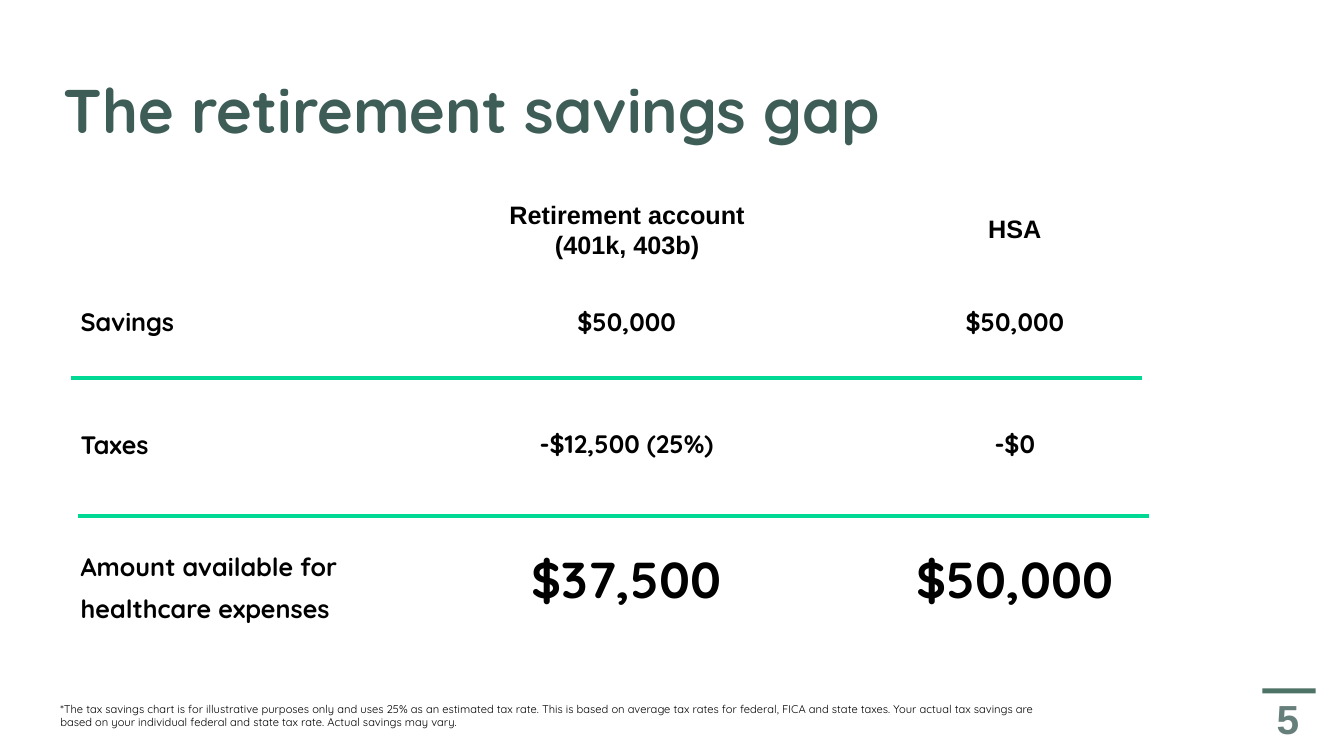
import pptx
import pptx.util
import pptx.dml.color
import pptx.enum.shapes
import pptx.enum.text
import pptx.oxml.ns
from lxml import etree
from dataclasses import dataclass

Inches = pptx.util.Inches
Pt = pptx.util.Pt
ALIGN = pptx.enum.text.PP_ALIGN
ANCHOR = pptx.enum.text.MSO_ANCHOR

TITLE = "The retirement savings gap"
LABELS = [["Savings"], ["Taxes"], ["Amount available for", "healthcare expenses"]]
ACCOUNTS = [
    {"header": ["Retirement account", "(401k, 403b)"], "header_box": (4.93, 1.93, 2.58, 0.71),
     "amounts": ["$50,000", "-$12,500 (25%)", "$37,500"], "left": 5.06, "width": 2.31},
    {"header": ["HSA"], "header_box": (9.7, 2.07, 0.73, 0.4),
     "amounts": ["$50,000", "-$0", "$50,000"], "left": 8.5, "width": 3.13},
]
FOOTNOTE = [
    "*The tax savings chart is for illustrative purposes only and uses 25% as an estimated tax rate. "
    "This is based on average tax rates for federal, FICA and state taxes. Your actual tax savings are",
    "based on your individual federal and state tax rate. Actual savings may vary.",
]
PAGE = "5"
RULES = [(0.7, 3.75), (0.77, 5.12)]
RULE_WIDTH = 10.63
ROWS_TOP, ROWS_HEIGHT = 3.02, 4.27


@dataclass(frozen=True)
class Theme:
    heading: str = "3E5D57"
    text: str = "000000"
    rule: str = "00D993"
    bar: str = "1C4C3C"
    soft: int = 78
    display: str = "Quicksand"
    plain: str = "Arial"
    title: int = 44
    page: int = 29
    body: int = 18
    total: int = 36
    note: int = 8
    leading: float = 0.9
    line_gap: float = 10
    row_gap: float = 68.3


theme = Theme()


def paint(fill, color, opacity=100):
    fill.solid()
    fill.fore_color.rgb = pptx.dml.color.RGBColor.from_string(color)
    if opacity < 100:
        node = next(fill._xPr.iter(pptx.oxml.ns.qn("a:srgbClr")))
        etree.SubElement(node, pptx.oxml.ns.qn("a:alpha"), val=str(opacity * 1000))


def add_run(p, text, size, font=theme.display, color=theme.text, bold=True, opacity=100):
    r = p.add_run()
    r.text = text
    r.font.size, r.font.name, r.font.bold = Pt(size), font, bold
    paint(r.font.fill, color, opacity)


def next_paragraph(tf, index, align, leading=None, gap=0):
    p = tf.add_paragraph() if index else tf.paragraphs[0]
    p.alignment = align
    p.space_before = Pt(gap)
    if leading:
        p.line_spacing = leading
    return p


def place(sp, left, top, width, height):
    sp.left, sp.top = Inches(left), Inches(top)
    sp.width, sp.height = Inches(width), Inches(height)


def add_box(s, box, anchor=ANCHOR.TOP, wrap=True):
    tf = s.shapes.add_textbox(*map(Inches, box)).text_frame
    tf.word_wrap, tf.vertical_anchor = wrap, anchor
    return tf


def write_rows(tf, rows, align, last_size):
    index = 0
    for number, lines in enumerate(rows):
        for position, line in enumerate(lines):
            gap = theme.row_gap if number and not position else theme.line_gap
            p = next_paragraph(tf, index, align, theme.leading, gap)
            add_run(p, line, last_size if number == len(rows) - 1 else theme.body)
            index += 1


def add_title(s):
    sp = s.shapes.title
    place(sp, 0.53, 0.4, 12.33, 1.45)
    tf = sp.text_frame
    tf.vertical_anchor = ANCHOR.MIDDLE
    p = next_paragraph(tf, 0, ALIGN.LEFT, theme.leading)
    add_run(p, TITLE, theme.title, color=theme.heading)


def add_labels(s):
    sp = s.placeholders[1]
    place(sp, 0.7, ROWS_TOP, 4.14, ROWS_HEIGHT)
    tf = sp.text_frame
    tf.auto_size = pptx.enum.text.MSO_AUTO_SIZE.NONE
    write_rows(tf, LABELS, ALIGN.LEFT, theme.body)
    for p in tf.paragraphs:
        pPr = p._p.get_or_add_pPr()
        pPr.set("marL", "0")
        pPr.set("indent", "0")
        etree.SubElement(pPr, pptx.oxml.ns.qn("a:buNone"))


def add_account(s, account):
    tf = add_box(s, account["header_box"], wrap=False)
    for index, line in enumerate(account["header"]):
        add_run(next_paragraph(tf, index, ALIGN.CENTER), line, theme.body, theme.plain)
    tf = add_box(s, (account["left"], ROWS_TOP, account["width"], ROWS_HEIGHT))
    write_rows(tf, [[amount] for amount in account["amounts"]], ALIGN.CENTER, theme.total)


def add_rule(s, left, top):
    line = s.shapes.add_connector(pptx.enum.shapes.MSO_CONNECTOR.STRAIGHT, Inches(left), Inches(top),
                                  Inches(left + RULE_WIDTH), Inches(top))
    paint(line.line.fill, theme.rule)
    line.line.width = Pt(2.5)
    etree.SubElement(line._element.spPr, pptx.oxml.ns.qn("a:effectLst"))


def add_footer(s):
    tf = add_box(s, (0.5, 6.85, 11.91, 0.5), ANCHOR.MIDDLE)
    p = tf.paragraphs[0]
    for index, line in enumerate(FOOTNOTE):
        if index:
            p.add_line_break()
        add_run(p, line, theme.note, bold=False)

    bar = s.shapes.add_shape(pptx.enum.shapes.MSO_SHAPE.RECTANGLE, *map(Inches, (12.52, 6.83, 0.53, 0.05)))
    bar.shadow.inherit = False
    paint(bar.fill, theme.bar, theme.soft)
    bar.line.fill.background()

    tf = add_box(s, (12.41, 6.76, 0.73, 0.74), ANCHOR.MIDDLE)
    p = next_paragraph(tf, 0, ALIGN.CENTER)
    add_run(p, PAGE, theme.page, theme.plain, theme.heading, opacity=theme.soft)


def main():
    prs = pptx.Presentation()
    prs.slide_width, prs.slide_height = Inches(13.33), Inches(7.5)
    s = prs.slides.add_slide(prs.slide_layouts[1])
    add_title(s)
    add_labels(s)
    for left, top in RULES:
        add_rule(s, left, top)
    for account in ACCOUNTS:
        add_account(s, account)
    add_footer(s)
    prs.save("out.pptx")


if __name__ == "__main__":
    main()
